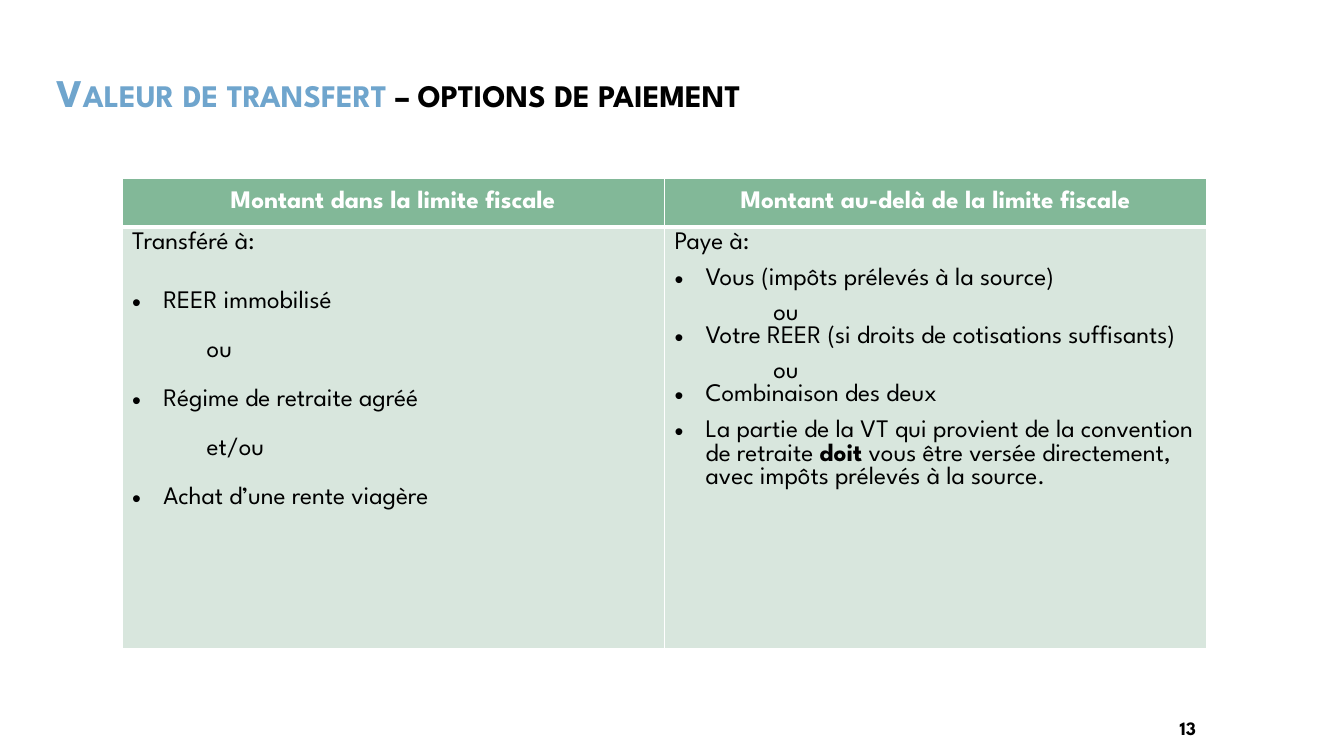
from lxml.etree import SubElement
from pptx import Presentation
from pptx.dml.color import RGBColor
from pptx.enum.text import MSO_ANCHOR as Anchor, PP_ALIGN as Align
from pptx.oxml.ns import qn
from pptx.util import Inches, Pt

FONT = "League Spartan"
COLORS = {"blue": "6FA5CD", "black": "000000", "white": "FFFFFF",
          "header": "82B898", "body": "D8E6DD"}

TITLE = [("Valeur de transfert ", "blue"), ("– options de paiement", "black")]
HEADERS = ["Montant dans la limite fiscale", "Montant au-delà de la limite fiscale"]
BULLET = {"indent": 0.31, "bullet": True}
LEFT_OR = {"indent": 0.74, "before": 18.5}
RIGHT_OR = {"indent": 0.98, "line": 1.5}
OPTIONS = [
    [
        ("Transféré à:", {}),
        ("REER immobilisé", {**BULLET, "before": 25.5}),
        ("ou", LEFT_OR),
        ("Régime de retraite agréé", {**BULLET, "before": 18.5}),
        ("et/ou", LEFT_OR),
        ("Achat d’une rente viagère", {**BULLET, "before": 18.5}),
    ],
    [
        ("Paye à:", {}),
        ("Vous (impôts prélevés à la source)", {**BULLET, "before": 9.25}),
        ("ou", RIGHT_OR),
        ("Votre REER (si droits de cotisations suffisants)", BULLET),
        ("ou", RIGHT_OR),
        ("Combinaison des deux", BULLET),
        ("La partie de la VT qui provient de la convention de retraite ",
         {**BULLET, "before": 9.25}),
    ],
]
MANDATORY = [("doit", True),
             (" vous être versée directement, avec impôts prélevés à la source.", False)]
PAGE = "13"


def color(name):
    return RGBColor.from_string(COLORS[name])


def write(paragraph, text, size=18, ink="black", bold=False, align=Align.LEFT,
          indent=0, bullet=False, before=0, line=None, small_caps=False):
    paragraph.alignment = align
    if before:
        paragraph.space_before = Pt(before)
    if line:
        paragraph.line_spacing = line
    if indent:
        properties = paragraph._p.get_or_add_pPr()
        properties.set("marL", str(Inches(indent)))
        properties.set("indent", str(-Inches(indent) if bullet else 0))
        if bullet:
            SubElement(properties, qn("a:buFont")).set("typeface", "Arial")
            SubElement(properties, qn("a:buChar")).set("char", "•")
    run = paragraph.add_run()
    run.text = text
    font = run.font
    font.name, font.size, font.bold = FONT, Pt(size), bold
    font.color.rgb = color(ink)
    if small_caps:
        run._r.get_or_add_rPr().set("cap", "small")


def style_cell(cell, fill, top=1, bottom=1):
    properties = cell._tc.get_or_add_tcPr()
    for side, width in zip("LRTB", (1, 1, top, bottom)):
        border = SubElement(properties, qn(f"a:ln{side}"), w=str(Pt(width)))
        solid = SubElement(border, qn("a:solidFill"))
        SubElement(solid, qn("a:srgbClr")).set("val", COLORS["white"])
    cell.fill.solid()
    cell.fill.fore_color.rgb = color(fill)


def main():
    deck = Presentation()
    deck.slide_width, deck.slide_height = Inches(13.33), Inches(7.5)
    slide = deck.slides.add_slide(deck.slide_layouts[5])

    title = slide.shapes.title
    title.left, title.top = Inches(0.46), Inches(0.63)
    title.width, title.height = Inches(7.75), Inches(0.63)
    title.fill.solid()
    title.fill.fore_color.rgb = color("white")
    title.text_frame.vertical_anchor = Anchor.MIDDLE
    for text, ink in TITLE:
        write(title.text_frame.paragraphs[0], text, size=28, ink=ink, bold=True,
              line=0.9, small_caps=True)

    table = slide.shapes.add_table(2, 2, Inches(1.21), Inches(1.77),
                                   Inches(10.76), Inches(4.66)).table
    table.rows[0].height, table.rows[1].height = Inches(0.48), Inches(4.18)
    for column, (header, options) in enumerate(zip(HEADERS, OPTIONS)):
        heading, body = table.cell(0, column), table.cell(1, column)
        style_cell(heading, "header", bottom=3)
        style_cell(body, "body", top=3)
        heading.vertical_anchor = Anchor.MIDDLE
        write(heading.text_frame.paragraphs[0], header, ink="white", bold=True,
              align=Align.CENTER)
        for index, (text, style) in enumerate(options):
            frame = body.text_frame
            paragraph = frame.add_paragraph() if index else frame.paragraphs[0]
            write(paragraph, text, **style)
    for text, bold in MANDATORY:
        write(paragraph, text, bold=bold)

    page = slide.shapes.add_textbox(Inches(9.71), Inches(7.06), Inches(2.25), Inches(0.3))
    page.text_frame.word_wrap = True
    write(page.text_frame.paragraphs[0], PAGE, size=13.5, bold=True, align=Align.RIGHT)

    deck.save("out.pptx")


if __name__ == "__main__":
    main()
